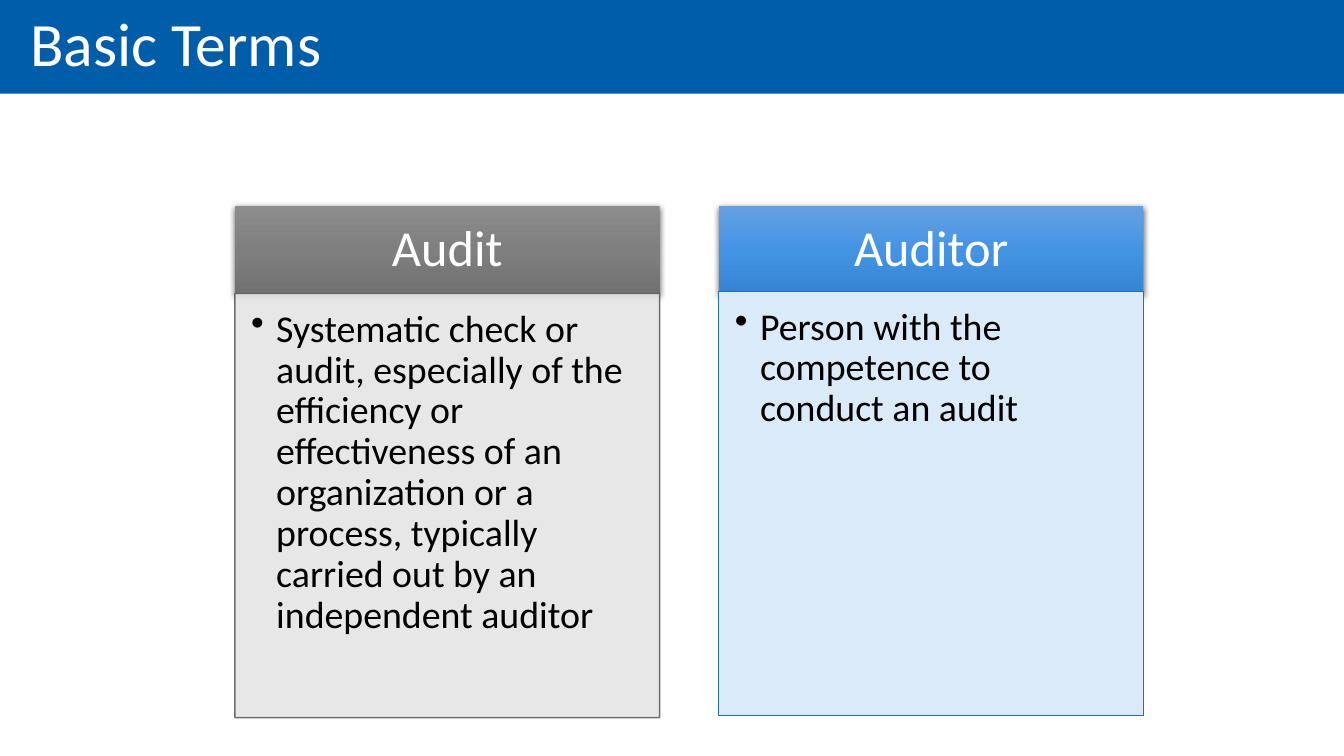
from copy import deepcopy

from pptx import Presentation
from pptx.dml.color import RGBColor
from pptx.enum.shapes import MSO_SHAPE as Shape
from pptx.enum.text import MSO_ANCHOR as Anchor, PP_ALIGN as Align
from pptx.oxml import parse_xml
from pptx.oxml.ns import nsdecls, qn
from pptx.util import Inches, Pt

# Palette
WHITE = RGBColor(0xFF, 0xFF, 0xFF)
BLACK = RGBColor(0x00, 0x00, 0x00)
BANNER_BLUE = RGBColor(0x00, 0x5D, 0xAA)
GRAY_RAMP = (RGBColor(0x8D, 0x8D, 0x8D), RGBColor(0x7F, 0x7F, 0x7F), RGBColor(0x71, 0x71, 0x71))
BLUE_RAMP = (RGBColor(0x66, 0xA0, 0xE2), RGBColor(0x44, 0x94, 0xE4), RGBColor(0x34, 0x84, 0xD3))
GRAY_PALE = RGBColor(0xE5, 0xE5, 0xE5)
GRAY_EDGE = RGBColor(0x5F, 0x5F, 0x5F)
BLUE_PALE = RGBColor(0xDB, 0xEA, 0xF8)
BLUE_EDGE = RGBColor(0x23, 0x6F, 0xBB)

# Card layout, in hundredths of the slide's width and height
CARD_LEFT, CARD_STEP, CARD_WIDTH = 17.48, 36, 31.6
HEADING_TOP, HEADING_HEIGHT = 27.2, 11.73
BODY_HEIGHT = 56.13

# term, definition, heading ramp, body fill, body edge, opacity in %, body top
CARDS = [
    ("Audit",
     "Systematic check or audit, especially of the efficiency or effectiveness of an "
     "organization or a process, typically carried out by an independent auditor",
     GRAY_RAMP, GRAY_PALE, GRAY_EDGE, 90, 38.8),
    ("Auditor", "Person with the competence to conduct an audit",
     BLUE_RAMP, BLUE_PALE, BLUE_EDGE, 100, 38.53),
]


def apply(target, formats):
    for attribute, value in formats.items():
        setattr(target, attribute, value)


class TermSlide:
    """Holds the font, the slide and its grid of 100 columns by 100 rows."""

    font = "Calibri"

    def __init__(self, deck):
        self.slide = deck.slides.add_slide(deck.slide_layouts[6])
        self.column = deck.slide_width / 100
        self.row = deck.slide_height / 100

    def block(self, left, top, width, height):
        block = self.slide.shapes.add_shape(
            Shape.RECTANGLE, round(left * self.column), round(top * self.row),
            round(width * self.column), round(height * self.row))
        block.shadow.inherit = False
        block.line.fill.background()
        return block

    def label(self, block, text, size, color, align, anchor, margins):
        frame = block.text_frame
        sides = ("margin_left", "margin_top", "margin_right", "margin_bottom")
        apply(frame, {"word_wrap": True, "vertical_anchor": anchor,
                      **dict(zip(sides, map(Inches, margins)))})
        paragraph = frame.paragraphs[0]
        apply(paragraph, {"text": text, "alignment": align, "line_spacing": 0.9})
        font = paragraph.runs[0].font
        apply(font, {"name": self.font, "size": Pt(size)})
        font.color.rgb = color
        return paragraph

    def banner(self, title):
        banner = self.block(0, 0, 100, 12.4)
        banner.fill.solid()
        banner.fill.fore_color.rgb = BANNER_BLUE
        self.label(banner, title, 44, WHITE, Align.LEFT, Anchor.MIDDLE, (0.3, 0.05, 0.3, 0.05))

    def heading(self, left, term, ramp):
        heading = self.block(left, HEADING_TOP, CARD_WIDTH, HEADING_HEIGHT)
        # Vertical three-stop gradient
        fill = heading.fill
        fill.gradient()
        fill.gradient_angle = 270
        stops = heading._element.spPr.find(".//" + qn("a:gsLst"))
        stops.insert(1, deepcopy(stops[0]))
        for stop, color, position in zip(fill.gradient_stops, ramp, (0, 0.5, 1)):
            stop.color.rgb = color
            stop.position = position
        # Soft shadow below
        heading._element.spPr.find(qn("a:effectLst")).append(parse_xml(
            f'<a:outerShdw {nsdecls("a")} blurRad="{Pt(4.5)}" dist="{Pt(1.5)}" dir="5400000" '
            'rotWithShape="0"><a:srgbClr val="000000"><a:alpha val="63000"/></a:srgbClr>'
            '</a:outerShdw>'))
        self.label(heading, term, 36, WHITE, Align.CENTER, Anchor.MIDDLE, (0.28, 0.16, 0.28, 0.16))

    def body(self, left, top, definition, color, edge, opacity):
        body = self.block(left, top, CARD_WIDTH, BODY_HEIGHT)
        body.fill.solid()
        body.fill.fore_color.rgb = color
        body.line.color.rgb = edge
        body.line.width = Pt(1)
        if opacity < 100:
            for paint in body._element.spPr.iter(qn("a:srgbClr")):
                paint.append(parse_xml(f'<a:alpha {nsdecls("a")} val="{opacity * 1000}"/>'))
        bullet = self.label(body, definition, 27, BLACK, Align.LEFT, Anchor.TOP,
                            (0.16, 0.16, 0.21, 0.24))
        # Hanging bullet
        bullet.level = 1
        properties = bullet._p.get_or_add_pPr()
        properties.set("marL", str(Inches(0.25)))
        properties.set("indent", str(-Inches(0.25)))
        properties.append(parse_xml(f'<a:buChar {nsdecls("a")} char="•"/>'))


def main():
    deck = Presentation()
    apply(deck, {"slide_width": Inches(13.33), "slide_height": Inches(7.5)})
    terms = TermSlide(deck)

    # Title banner
    terms.banner("Basic Terms")

    # One card per term
    for index, (term, definition, ramp, pale, edge, opacity, top) in enumerate(CARDS):
        left = CARD_LEFT + index * CARD_STEP
        terms.heading(left, term, ramp)
        terms.body(left, top, definition, pale, edge, opacity)

    deck.save("out.pptx")


if __name__ == "__main__":
    main()
